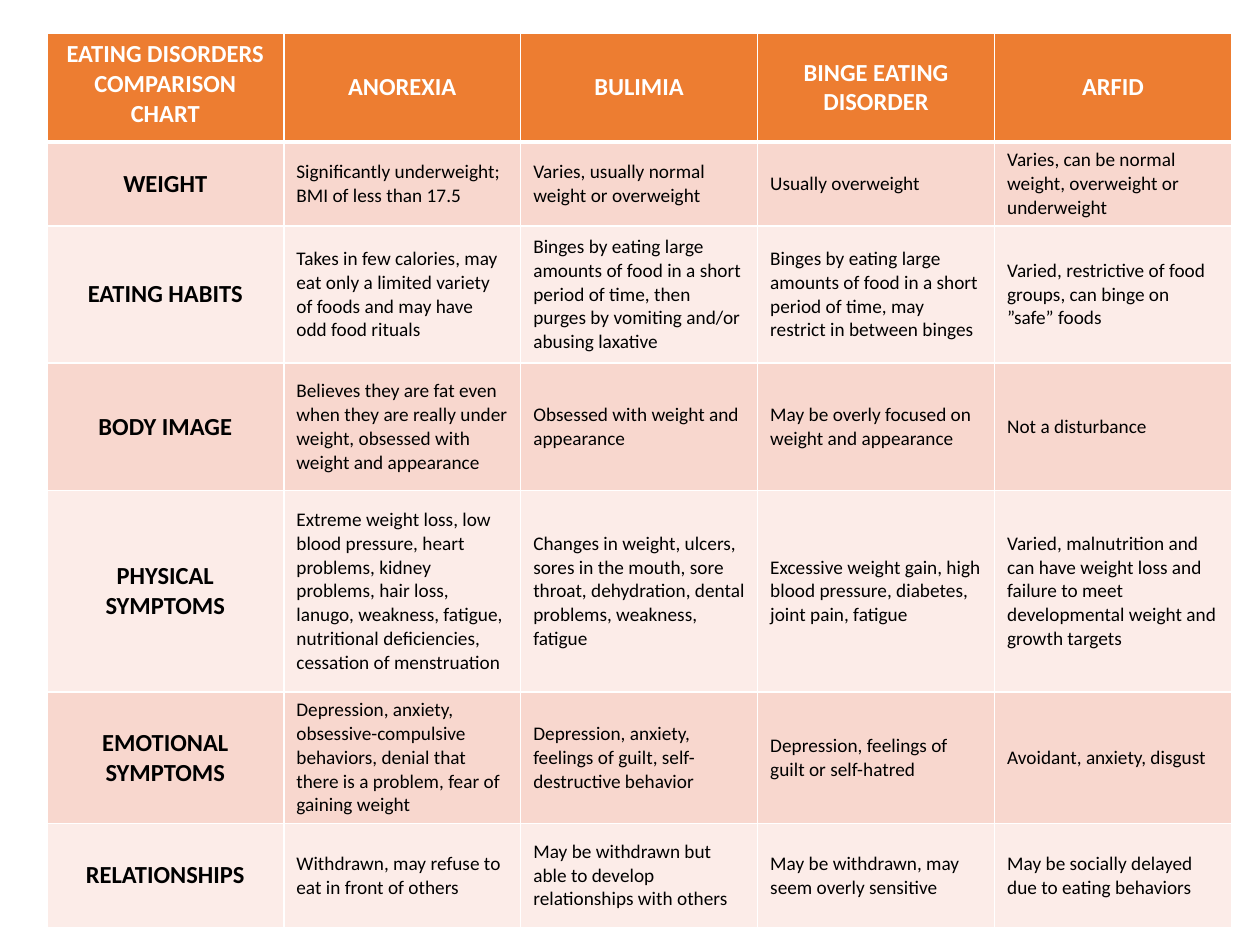
from pptx import Presentation
from pptx.dml.color import RGBColor
from pptx.enum.text import MSO_ANCHOR, PP_ALIGN
from pptx.oxml.ns import qn
from pptx.util import Pt
from lxml import etree

TOP, MIDDLE = MSO_ANCHOR.TOP, MSO_ANCHOR.MIDDLE
LEFT, CENTER = PP_ALIGN.LEFT, PP_ALIGN.CENTER

WHITE = RGBColor(0xFF, 0xFF, 0xFF)
BLACK = RGBColor(0x00, 0x00, 0x00)
ORANGE = RGBColor(0xED, 0x7D, 0x31)
PEACH = RGBColor(0xF8, 0xD7, 0xCE)
PALE_PEACH = RGBColor(0xFC, 0xEC, 0xE8)

HEADING_FONT = {"name": "Calibri", "size": Pt(14), "bold": True}
BODY_FONT = {"name": "Calibri", "size": Pt(11), "bold": False}

ROW_HEIGHTS = [62.4, 46.2, 78.4, 72.7, 115.2, 72.7, 59.6]
COMPARISON = [
    ["EATING DISORDERS COMPARISON CHART", "ANOREXIA", "BULIMIA",
     "BINGE EATING DISORDER", "ARFID"],
    ["WEIGHT",
     "Significantly underweight; BMI of less than 17.5",
     "Varies, usually normal weight or overweight",
     "Usually overweight",
     "Varies, can be normal weight, overweight or underweight"],
    ["EATING HABITS",
     "Takes in few calories, may eat only a limited variety of foods "
     "and may have odd food rituals",
     "Binges by eating large amounts of food in a short period of time, "
     "then purges by vomiting and/or abusing laxative",
     "Binges by eating large amounts of food in a short period of time, "
     "may restrict in between binges",
     "Varied, restrictive of food groups, can binge on ”safe” foods"],
    ["BODY IMAGE",
     "Believes they are fat even when they are really under weight, "
     "obsessed with weight and appearance",
     "Obsessed with weight and appearance",
     "May be overly focused on weight and appearance",
     "Not a disturbance"],
    ["PHYSICAL SYMPTOMS",
     "Extreme weight loss, low blood pressure, heart problems, kidney "
     "problems, hair loss, lanugo, weakness, fatigue, nutritional "
     "deficiencies, cessation of menstruation",
     "Changes in weight, ulcers, sores in the mouth, sore throat, "
     "dehydration, dental problems, weakness, fatigue",
     "Excessive weight gain, high blood pressure, diabetes, joint pain, fatigue",
     "Varied, malnutrition and can have weight loss and failure to meet "
     "developmental weight and growth targets"],
    ["EMOTIONAL SYMPTOMS",
     "Depression, anxiety, obsessive-compulsive behaviors, denial that "
     "there is a problem, fear of gaining weight",
     "Depression, anxiety, feelings of guilt, self-destructive behavior",
     "Depression, feelings of guilt or self-hatred",
     "Avoidant, anxiety, disgust"],
    ["RELATIONSHIPS",
     "Withdrawn, may refuse to eat in front of others",
     "May be withdrawn but able to develop relationships with others",
     "May be withdrawn, may seem overly sensitive",
     "May be socially delayed due to eating behaviors"],
]


class Deck:
    def __init__(self, width, height):
        self.prs = Presentation()
        self.prs.slide_width, self.prs.slide_height = Pt(width), Pt(height)
        self.s = self.prs.slides.add_slide(self.prs.slide_layouts[6])

    def borders(self, cell, widths):
        """Draw white cell edges; widths maps an edge letter to points."""
        tcPr = cell._tc.get_or_add_tcPr()
        for edge, width in widths.items():
            ln = etree.SubElement(tcPr, qn(f"a:ln{edge}"), w=str(Pt(width)))
            fill = etree.SubElement(ln, qn("a:solidFill"))
            etree.SubElement(fill, qn("a:srgbClr"), val=str(WHITE))

    def cell(self, cell, text, fill, color, font, align, anchor):
        cell.fill.solid()
        cell.fill.fore_color.rgb = fill
        cell.vertical_anchor = anchor
        p = cell.text_frame.paragraphs[0]
        p.alignment = align
        r = p.add_run()
        r.text = text
        for name, value in font.items():
            setattr(r.font, name, value)
        r.font.color.rgb = color

    def table(self, rows, heights, left, top, width):
        table = self.s.shapes.add_table(
            len(rows), len(rows[0]), Pt(left), Pt(top), Pt(width), Pt(sum(heights))).table
        for row, height in zip(table.rows, heights):
            row.height = Pt(height)
        for i, texts in enumerate(rows):
            header = i == 0
            fill = ORANGE if header else PEACH if i % 2 else PALE_PEACH
            for j, text in enumerate(texts):
                heading = header or j == 0
                cell = table.cell(i, j)
                self.borders(cell, {"L": 1, "R": 1, "T": 3 if i == 1 else 1,
                                    "B": 3 if header else 1})
                self.cell(cell, text, fill,
                          WHITE if header else BLACK,
                          HEADING_FONT if heading else BODY_FONT,
                          CENTER if heading else LEFT,
                          TOP if header and j == 0 else MIDDLE)


def main():
    deck = Deck(720, 540)
    deck.table(COMPARISON, ROW_HEIGHTS, left=26.8, top=18.8, width=677)
    deck.prs.save("out.pptx")


if __name__ == "__main__":
    main()
